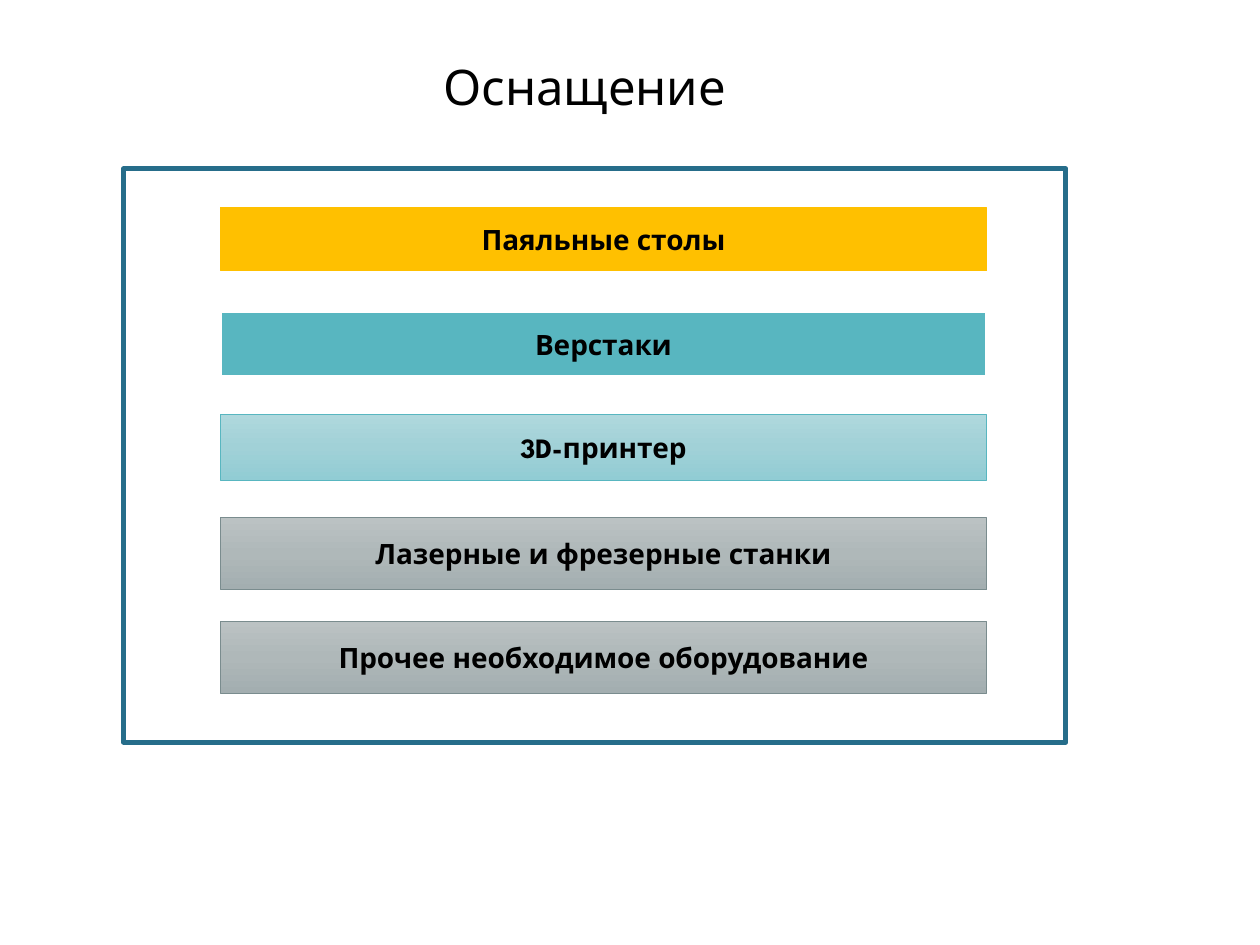
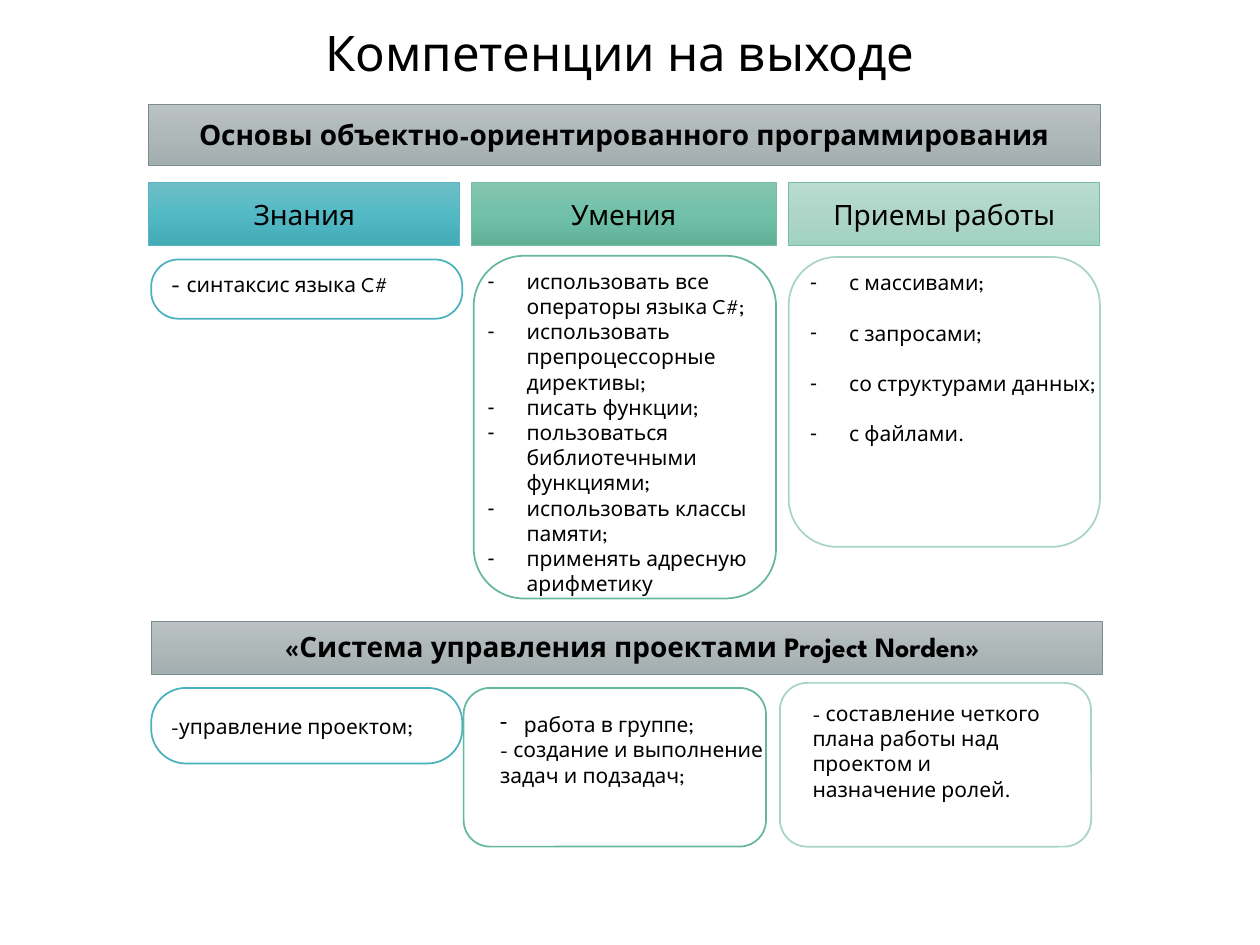
import copy
from dataclasses import dataclass

import pptx
import pptx.dml.color
import pptx.enum.shapes
import pptx.enum.text
import pptx.oxml
import pptx.oxml.ns
import pptx.util

ALIGN = pptx.enum.text.PP_ALIGN
ANCHOR = pptx.enum.text.MSO_ANCHOR
SHAPE = pptx.enum.shapes.MSO_SHAPE
EMU_PER_PX = 9144
TITLE_ONLY, TWO_CONTENT = 5, 3


def px(length):
    return pptx.util.Emu(length * EMU_PER_PX)


def rgb(value):
    return pptx.dml.color.RGBColor.from_string(value)


@dataclass(frozen=True)
class Theme:
    font: str = "League Spartan"
    title_size: int = 28
    label_size: int = 16
    dash_size: int = 14
    body_size: int = 12
    line_gap: float = 14.4
    text: str = "000000"
    white: str = "FFFFFF"
    frame: str = "266D8A"
    amber: str = "FFC000"
    teal: str = "58B6C0"
    green: str = "75BDA7"
    slate: str = "7A8C8E"
    slate_fade: tuple = ("BBC2C3", "AFB8B9", "A3AEB0")
    pale_teal_fade: tuple = ("AFD8DD", "A1D1D7", "91CCD4")
    teal_fade: tuple = ("6FBEC7", "53BAC5", "44AAB5")
    green_fade: tuple = ("86C5B1", "71C1A8", "61AF97")
    pale_green_fade: tuple = ("BBDCD1", "AED5C8", "A1D2C1")
    teal_line: str = "4BB2BD"
    green_line: str = "67B79E"
    pale_green_line: str = "A8D4C5"


class Deck:
    """Holds the presentation, its theme and the current slide."""

    def __init__(self, theme):
        self.theme = theme
        self.presentation = pptx.Presentation()
        self.presentation.slide_width = px(1000)
        self.presentation.slide_height = px(750)
        self.slide = None

    def add_slide(self, layout, title, box, align):
        layouts = self.presentation.slide_layouts
        self.slide = self.presentation.slides.add_slide(layouts[layout])
        frame = self.place(self.slide.shapes.title, box)
        self.add_text(frame, [title], self.theme.title_size, align=align)

    def place(self, shape, box):
        shape.left, shape.top, shape.width, shape.height = map(px, box)
        frame = shape.text_frame
        frame.word_wrap = True
        frame.auto_size = pptx.enum.text.MSO_AUTO_SIZE.NONE
        frame.vertical_anchor = ANCHOR.TOP
        return frame

    def add_text(self, frame, texts, size, bold=False, align=ALIGN.LEFT, gap=0):
        for index, text in enumerate(texts):
            paragraph = frame.add_paragraph() if index else frame.paragraphs[0]
            paragraph.alignment = align
            paragraph.space_before = pptx.util.Pt(gap if index else 0)
            runs = [(text, size)] if isinstance(text, str) else text
            for words, run_size in runs:
                run = paragraph.add_run()
                run.text = words
                run.font.name = self.theme.font
                run.font.size = pptx.util.Pt(run_size)
                run.font.bold = bold
                run.font.color.rgb = rgb(self.theme.text)

    def dash(self, paragraph, indent):
        properties = paragraph._p.get_or_add_pPr()
        properties.set("marL", str(px(indent)))
        properties.set("indent", str(-px(indent)))
        bullet = pptx.oxml.parse_xml(
            f'<a:buChar {pptx.oxml.ns.nsdecls("a")} char="-"/>')
        properties.append(bullet)

    def dash_list(self, index, box, items, gap=0):
        frame = self.place(self.slide.placeholders[index], box)
        self.add_text(frame, items, self.theme.body_size, gap=gap)
        for paragraph in frame.paragraphs:
            self.dash(paragraph, 31)

    def text(self, box, texts, size=None, wrap=True, **style):
        shape = self.slide.shapes.add_textbox(*map(px, box))
        frame = self.place(shape, box)
        frame.word_wrap = wrap
        self.add_text(frame, texts, size or self.theme.body_size, **style)
        return frame

    def outline(self, box, line, width=1, kind=SHAPE.ROUNDED_RECTANGLE, corner=None):
        shape = self.slide.shapes.add_shape(kind, *map(px, box))
        shape.shadow.inherit = False
        shape.fill.background()
        shape.line.color.rgb = rgb(line)
        shape.line.width = pptx.util.Pt(width)
        if corner is not None:
            shape.adjustments[0] = corner
        return shape

    def bar(self, box, fill, line, label="", bold=True, width=0.5):
        shape = self.outline(box, line, width, corner=0)
        if isinstance(fill, str):
            shape.fill.solid()
            shape.fill.fore_color.rgb = rgb(fill)
        else:
            self.fade(shape, fill)
        if label:
            frame = self.place(shape, box)
            frame.vertical_anchor = ANCHOR.MIDDLE
            self.add_text(frame, [label], self.theme.label_size, bold, ALIGN.CENTER)

    def fade(self, shape, colors):
        shape.fill.gradient()
        shape.fill.gradient_angle = 270
        stops = shape._element.spPr.find(".//" + pptx.oxml.ns.qn("a:gsLst"))
        stops.insert(1, copy.deepcopy(stops[0]))
        for index, (stop, color) in enumerate(zip(shape.fill.gradient_stops, colors)):
            stop.position = index / 2
            stop.color.rgb = rgb(color)


def build_equipment(deck):
    theme = deck.theme
    deck.add_slide(TITLE_ONLY, "Оснащение", (342, 40, 414, 57), ALIGN.LEFT)
    deck.outline((98, 134, 748, 455), theme.frame, 2.75, SHAPE.RECTANGLE)
    equipment = [
        ("Паяльные столы", 50, theme.amber, theme.amber, 0.5),
        ("Верстаки", 52, theme.teal, theme.white, 1.5),
        ("3D-принтер", 52, theme.pale_teal_fade, theme.teal, 0.5),
        ("Лазерные и фрезерные станки", 57, theme.slate_fade, theme.slate, 0.5),
        ("Прочее необходимое оборудование", 57, theme.slate_fade, theme.slate, 0.5),
    ]
    for row, (label, height, fill, line, width) in enumerate(equipment):
        box = (175, 165 + 82 * row, 608, height)
        deck.bar(box, fill, line, label, width=width)


def build_competences(deck):
    theme = deck.theme
    deck.add_slide(TWO_CONTENT, "Компетенции на выходе", (16, 13, 952, 57), ALIGN.CENTER)
    deck.bar((118, 83, 755, 48), theme.slate_fade, theme.slate,
             "Основы объектно-ориентированного программирования")
    deck.bar((120, 493, 755, 42), theme.slate_fade, theme.slate)
    deck.text((216, 495, 572, 37), ["«Система управления проектами Project Norden»"],
              theme.label_size, wrap=False, bold=True, align=ALIGN.CENTER)

    columns = [
        ("Знания", 118, 247, theme.teal_fade, theme.teal),
        ("Умения", 374, 242, theme.green_fade, theme.green),
        ("Приемы работы", 626, 247, theme.pale_green_fade, theme.green),
    ]
    for label, left, width, fill, line in columns:
        deck.bar((left, 145, width, 50), fill, line, label, bold=False)

    cards = [
        (theme.teal_line, 0.46, (120, 206, 247, 47), (120, 546, 247, 60)),
        (theme.green_line, None, (376, 203, 240, 272), (368, 546, 240, 126)),
        (theme.pale_green_line, None, (626, 204, 247, 230), (619, 542, 247, 130)),
    ]
    for line, corner, *boxes in cards:
        for box in boxes:
            deck.outline(box, line, corner=corner)

    deck.text((126, 208, 203, 64), [[("- ", theme.dash_size),
                                     ("синтаксис языка C#", theme.body_size)]])
    deck.dash_list(1, (377, 208, 251, 273), [
        "использовать все операторы языка C#;",
        "использовать препроцессорные директивы;",
        "писать функции;",
        "пользоваться библиотечными функциями;",
        "использовать классы памяти;",
        "применять адресную арифметику",
    ])
    deck.dash_list(2, (633, 209, 247, 195), [
        "с массивами;", "с запросами;", "со структурами данных;", "с файлами.",
    ], gap=theme.line_gap)

    deck.text((126, 561, 251, 61), ["-управление проектом;"])
    teamwork = deck.text((387, 560, 249, 71), [
        "работа в группе;", "- создание и выполнение задач и подзадач;"])
    deck.dash(teamwork.paragraphs[0], 19)
    deck.text((635, 551, 208, 121), [
        "- составление четкого плана работы над проектом и назначение ролей."])


def main():
    deck = Deck(Theme())
    build_equipment(deck)
    build_competences(deck)
    deck.presentation.save("out.pptx")


if __name__ == "__main__":
    main()
